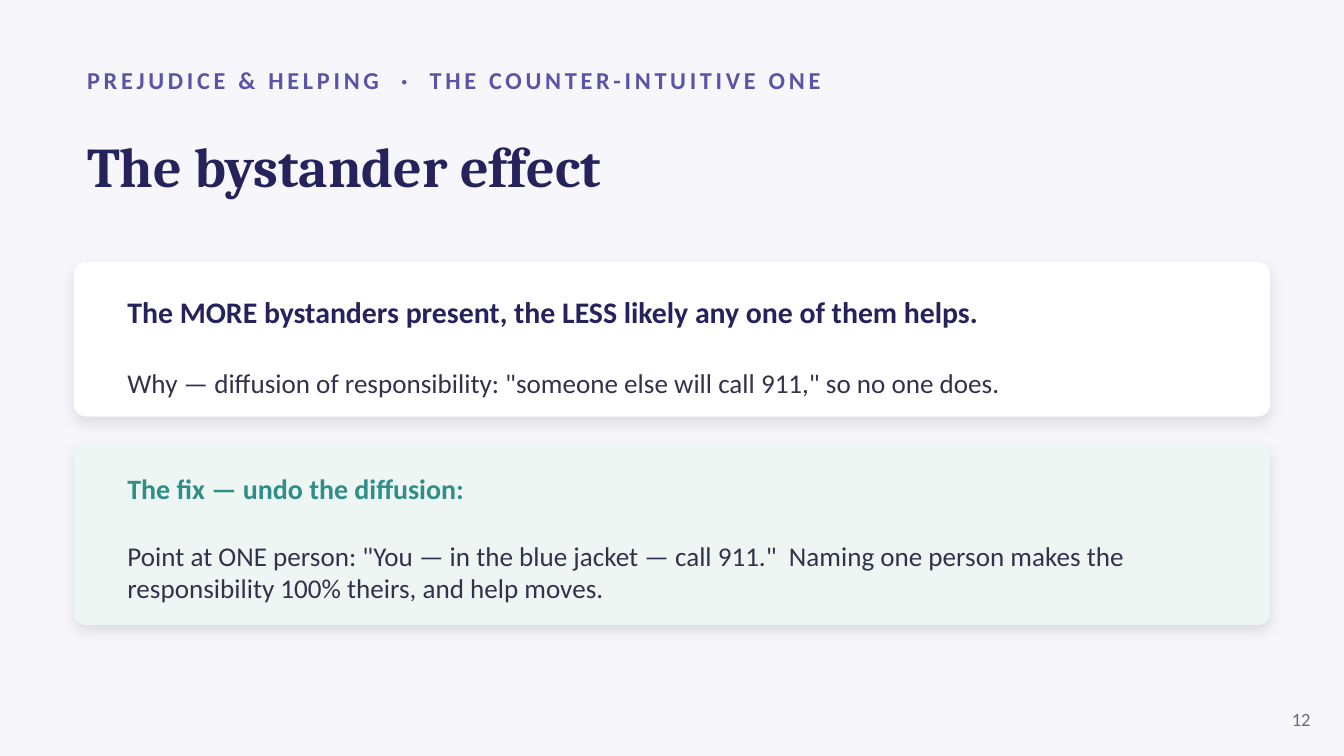
from lxml import etree
from pptx import Presentation
from pptx.dml.color import RGBColor
from pptx.enum.shapes import MSO_SHAPE
from pptx.enum.text import MSO_ANCHOR, PP_ALIGN
from pptx.oxml.ns import qn
from pptx.util import Inches, Pt

ROUND = MSO_SHAPE.ROUNDED_RECTANGLE
MIDDLE = MSO_ANCHOR.MIDDLE
LEFT, RIGHT = PP_ALIGN.LEFT, PP_ALIGN.RIGHT

BACK = RGBColor(0xF7, 0xF7, 0xFB)
WHITE = RGBColor(0xFF, 0xFF, 0xFF)
MINT = RGBColor(0xEE, 0xF6, 0xF4)
NAVY = RGBColor(0x26, 0x23, 0x5C)
VIOLET = RGBColor(0x5B, 0x53, 0xA6)
TEAL = RGBColor(0x2F, 0x8F, 0x86)
INK = RGBColor(0x33, 0x32, 0x4A)
GREY = RGBColor(0x6B, 0x6A, 0x86)

COLS, ROWS = 100, 56.25
EDGE, SPAN = 5.5, 89
PAD_X, PAD_Y = 3, 2
GAP = 2
RADIUS = 0.9


def cells(*counts):
    """Turn counts of grid cells, a tenth of an inch each, into lengths."""
    return [Inches(count / 10) for count in counts]


class Deck:
    body = "Calibri"
    head = "Cambria"

    def __init__(self):
        self.prs = Presentation()
        self.prs.slide_width, self.prs.slide_height = cells(COLS, ROWS)
        self.slide = self.prs.slides.add_slide(self.prs.slide_layouts[6])
        fill = self.slide.background.fill
        fill.solid()
        fill.fore_color.rgb = BACK

    def box(self, x, y, w, h):
        frame = self.slide.shapes.add_textbox(*cells(x, y, w, h)).text_frame
        frame.word_wrap = True
        frame.vertical_anchor = MIDDLE
        return frame

    def run(self, para, text, size, color, bold=False, face=body, track=0):
        """Add a run; track is the letter spacing in points."""
        run = para.add_run()
        run.text = text
        font = run.font
        font.name, font.size, font.bold = face, Pt(size), bold
        font.color.rgb = color
        if track:
            run._r.get_or_add_rPr().set("spc", str(track * 100))

    def line(self, place, text, size, color, align=LEFT, **style):
        para = self.box(*place).paragraphs[0]
        para.alignment = align
        self.run(para, text, size, color, **style)

    def shade(self, shape):
        """Give the shape a soft shadow that falls straight down."""
        shape.shadow.inherit = False
        effects = shape._element.spPr.find(qn("a:effectLst"))
        outer = etree.SubElement(effects, qn("a:outerShdw"), blurRad=str(Pt(7)),
                                 dist=str(Pt(3)), dir="5400000", rotWithShape="0")
        color = etree.SubElement(outer, qn("a:srgbClr"), val="000000")
        etree.SubElement(color, qn("a:alpha"), val="10000")

    def card(self, top, height, fill, inner, lead, size, color, note):
        """Draw a panel with a bold lead and a note, and return its bottom row."""
        panel = self.slide.shapes.add_shape(ROUND, *cells(EDGE, top, SPAN, height))
        panel.adjustments[0] = RADIUS / height
        panel.fill.solid()
        panel.fill.fore_color.rgb = fill
        panel.line.fill.background()
        self.shade(panel)
        frame = self.box(EDGE + PAD_X, top + PAD_Y, SPAN - 2 * PAD_X, inner)
        self.run(frame.paragraphs[0], lead, size, color, bold=True)
        para = frame.add_paragraph()
        para.space_before = Pt(size * 1.22)
        self.run(para, note, 14.5, INK)
        return top + height


def main():
    deck = Deck()
    deck.line((EDGE, 4.2, 90, 3.5), "PREJUDICE & HELPING  ·  THE COUNTER-INTUITIVE ONE",
              13, VIOLET, bold=True, track=2)
    deck.line((EDGE, 7.8, SPAN, 9), "The bystander effect", 30, NAVY,
              bold=True, face=deck.head)
    end = deck.card(
        19.5, 11.5, WHITE, 8.5,
        "The MORE bystanders present, the LESS likely any one of them helps.", 16, NAVY,
        'Why — diffusion of responsibility: "someone else will call 911," so no one does.')
    deck.card(
        end + GAP, 13.5, MINT, 10, "The fix — undo the diffusion:", 15, TEAL,
        'Point at ONE person: "You — in the blue jacket — call 911."  Naming one person '
        "makes the responsibility 100% theirs, and help moves.")
    deck.line((93.5, 52, 5, 3), "12", 10, GREY, align=RIGHT)
    deck.prs.save("out.pptx")


if __name__ == "__main__":
    main()
